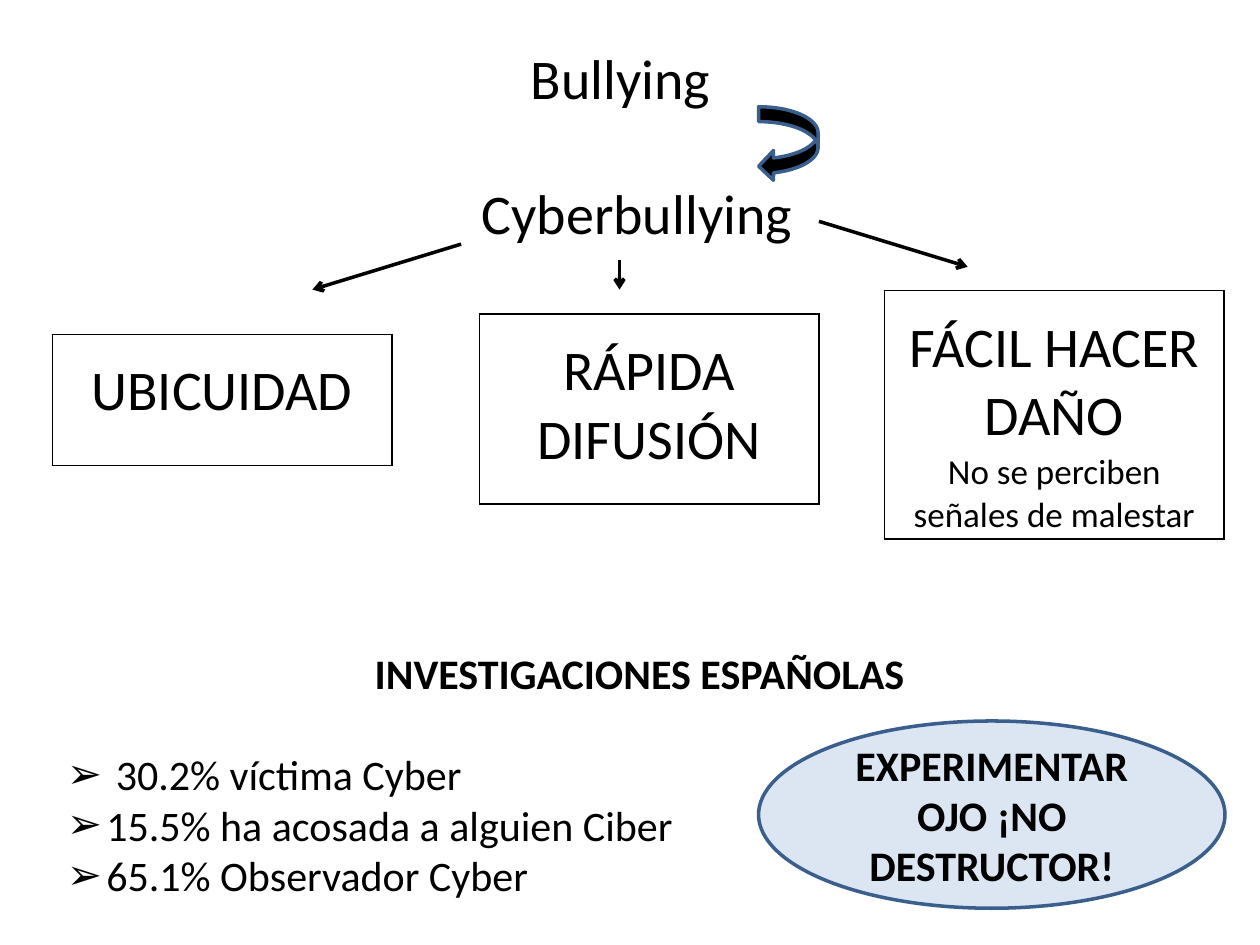
from lxml.etree import SubElement
from pptx import Presentation
from pptx.dml.color import RGBColor
from pptx.enum.shapes import MSO_CONNECTOR, MSO_SHAPE
from pptx.enum.text import MSO_ANCHOR, MSO_AUTO_SIZE, PP_ALIGN
from pptx.oxml.ns import qn
from pptx.util import Pt

COLORS = {"ink": "000000", "paper": "FFFFFF", "outline": "3A5F8C", "pale": "DCE6F2"}


class SlideBuilder:
    """Holds the style and the current slide."""

    font = "Calibri"

    def __init__(self, slide):
        self.slide = slide

    def color(self, name):
        return RGBColor.from_string(COLORS[name])

    def line_of_text(self, paragraph, text, size, bold=False, align=PP_ALIGN.CENTER, before=0):
        paragraph.alignment = align
        paragraph.space_before = Pt(before)
        run = paragraph.add_run()
        run.text = text
        run.font.name = self.font
        run.font.size = Pt(size)
        run.font.bold = bold
        run.font.color.rgb = self.color("ink")
        return paragraph

    def centered_lines(self, frame, lines):
        """Each line is (text, size, bold)."""
        for index, line in enumerate(lines):
            paragraph = frame.add_paragraph() if index else frame.paragraphs[0]
            self.line_of_text(paragraph, *line)

    def indent(self, paragraph, left, hanging=0, bullet=None):
        properties = paragraph._p.get_or_add_pPr()
        properties.set("marL", str(Pt(left)))
        properties.set("indent", str(-Pt(hanging)))
        if bullet:
            SubElement(properties, qn("a:buChar"), char=bullet)
        else:
            SubElement(properties, qn("a:buNone"))

    def placeholder(self, shape, left, top, width, height):
        shape.left, shape.top = Pt(left), Pt(top)
        shape.width, shape.height = Pt(width), Pt(height)
        frame = shape.text_frame
        frame.word_wrap = True
        frame.auto_size = MSO_AUTO_SIZE.NONE
        frame.vertical_anchor = MSO_ANCHOR.TOP
        return frame

    def shape(self, kind, left, top, width, height, fill):
        shape = self.slide.shapes.add_shape(kind, Pt(left), Pt(top), Pt(width), Pt(height))
        shape.shadow.inherit = False
        shape.fill.solid()
        shape.fill.fore_color.rgb = self.color(fill)
        shape.line.color.rgb = self.color("outline")
        shape.line.width = Pt(2)
        return shape

    def boxed_table(self, left, top, height, lines, width=194):
        frame = self.slide.shapes.add_table(1, 1, Pt(left), Pt(top), Pt(width), Pt(height))
        cell = frame.table.cell(0, 0)
        cell.margin_top, cell.margin_bottom = Pt(13.4), Pt(1)
        self.centered_lines(cell.text_frame, lines)
        properties = cell._tc.get_or_add_tcPr()
        for side in ("lnL", "lnR", "lnT", "lnB"):
            border = SubElement(properties, qn(f"a:{side}"), w=str(Pt(1)))
            solid = SubElement(border, qn("a:solidFill"))
            SubElement(solid, qn("a:srgbClr"), val=COLORS["ink"])
        cell.fill.solid()
        cell.fill.fore_color.rgb = self.color("paper")

    def arrow(self, *points):
        connector = self.slide.shapes.add_connector(
            MSO_CONNECTOR.STRAIGHT, *(Pt(point) for point in points))
        connector.line.color.rgb = self.color("ink")
        connector.line.width = Pt(2)
        SubElement(connector.line._get_or_add_ln(), qn("a:tailEnd"), type="arrow")
        SubElement(connector._element.spPr, qn("a:effectLst"))


def main():
    presentation = Presentation()
    presentation.slide_width, presentation.slide_height = Pt(720), Pt(540)
    slide = presentation.slides.add_slide(presentation.slide_layouts[1])
    builder = SlideBuilder(slide)

    # Title: from bullying to cyberbullying
    frame = builder.placeholder(slide.shapes.title, 31, 21, 669, 145)
    bullying = builder.line_of_text(
        frame.paragraphs[0], "Bullying", 32, align=PP_ALIGN.LEFT)
    cyberbullying = builder.line_of_text(
        frame.add_paragraph(), "Cyberbullying", 32, align=PP_ALIGN.LEFT, before=39)
    builder.indent(bullying, 265)
    builder.indent(cyberbullying, 237)
    builder.shape(MSO_SHAPE.CURVED_LEFT_ARROW, 433.5, 61, 34, 42.5, "ink")

    # Three features
    builder.boxed_table(30, 191, 75, [("UBICUIDAD", 32)])
    builder.boxed_table(274, 179.5, 108.5, [("RÁPIDA DIFUSIÓN", 32)])
    builder.boxed_table(505.5, 166, 142, [
        ("FÁCIL HACER DAÑO", 32), ("No se perciben señales de malestar", 20)])

    # Arrows to the features
    builder.arrow(263.5, 139.5, 178.5, 165.5)
    builder.arrow(468, 126.5, 553, 152.5)
    builder.arrow(354, 148.5, 354, 165.5)

    # Research findings
    frame = builder.placeholder(slide.placeholders[1], 31, 366.5, 669, 152.5)
    heading = builder.line_of_text(
        frame.paragraphs[0], "INVESTIGACIONES ESPAÑOLAS", 24, True)
    builder.indent(heading, 0)
    findings = [" 30.2% víctima Cyber", "15.5% ha acosada a alguien Ciber",
                "65.1% Observador Cyber"]
    for index, finding in enumerate(findings):
        paragraph = builder.line_of_text(
            frame.add_paragraph(), finding, 24, align=PP_ALIGN.LEFT, before=0 if index else 29)
        builder.indent(paragraph, 22.5, 22.5, "➢")

    # Warning
    warning = builder.shape(MSO_SHAPE.OVAL, 433.5, 412, 266.5, 107, "pale")
    warning.text_frame.word_wrap = True
    warning.text_frame.vertical_anchor = MSO_ANCHOR.MIDDLE
    builder.centered_lines(warning.text_frame, [
        ("EXPERIMENTAR", 24, True), ("OJO ¡NO DESTRUCTOR!", 24, True)])

    presentation.save("out.pptx")


if __name__ == "__main__":
    main()
